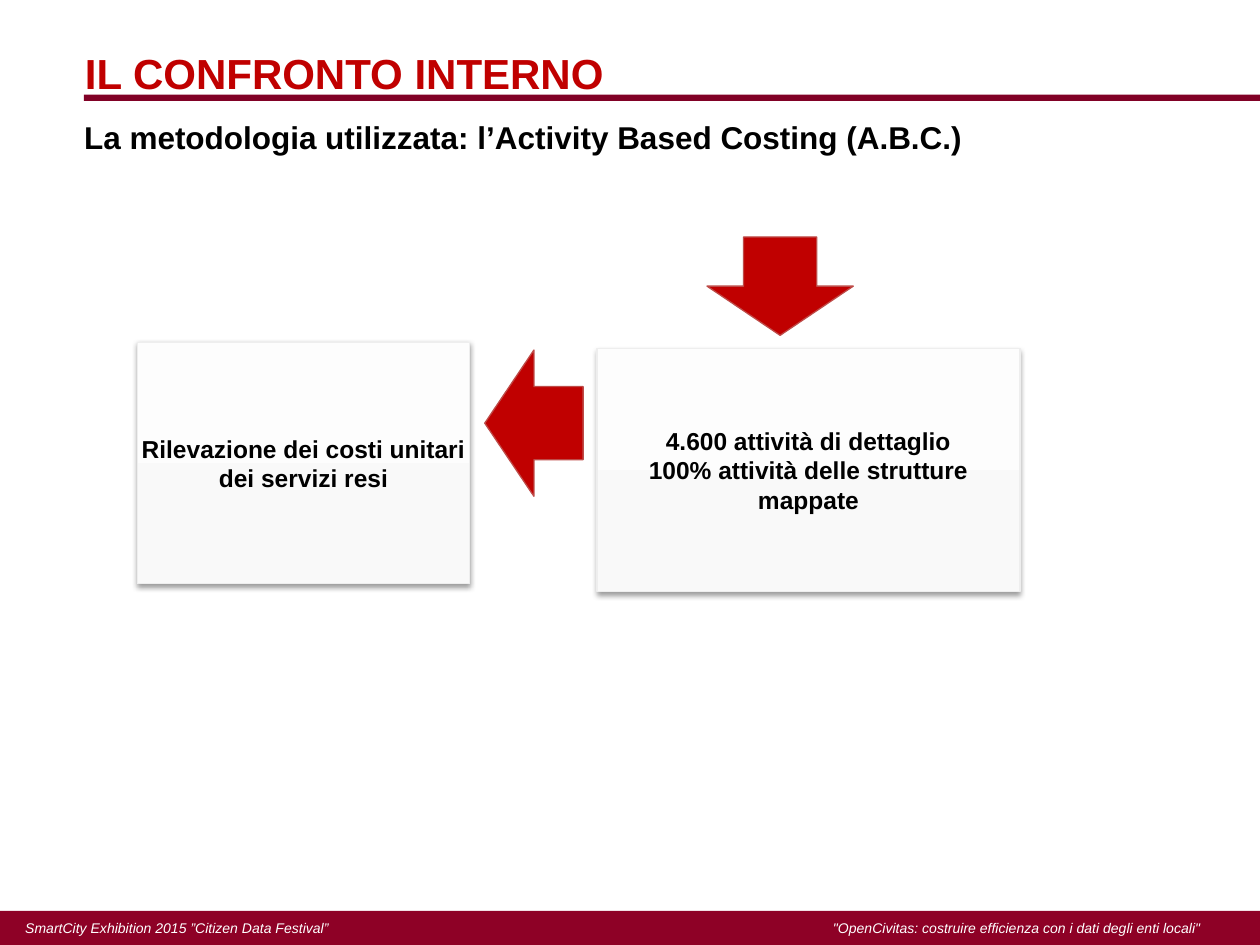
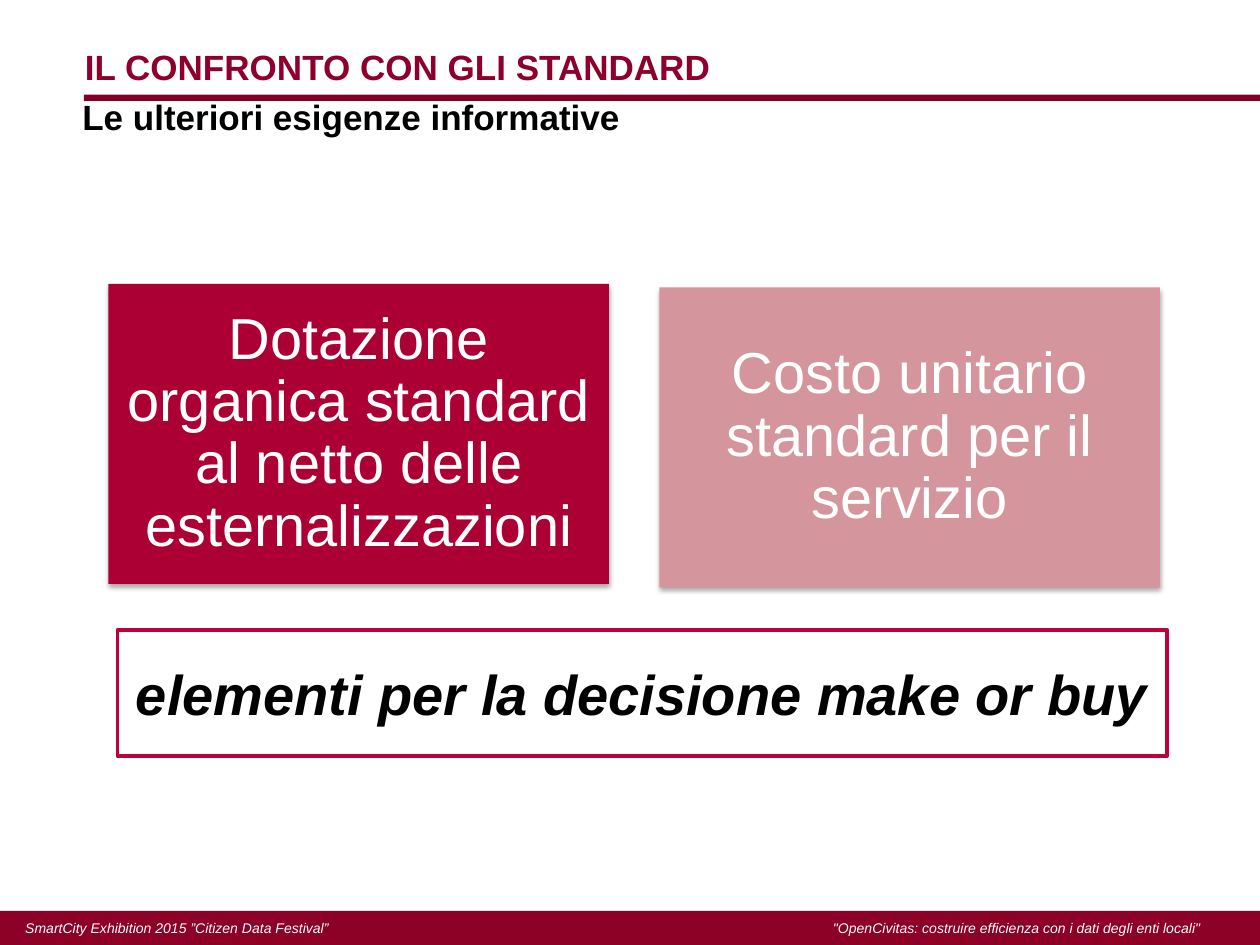
from dataclasses import dataclass

import pptx
import pptx.dml.color
import pptx.enum.shapes
import pptx.enum.text
import pptx.oxml
import pptx.oxml.ns
import pptx.util
from lxml import etree

Pt = pptx.util.Pt
RGB = pptx.dml.color.RGBColor.from_string
Shape = pptx.enum.shapes.MSO_SHAPE
Align = pptx.enum.text.PP_ALIGN
Anchor = pptx.enum.text.MSO_ANCHOR


@dataclass(frozen=True)
class Theme:
    font: str = "Arial"
    black: str = "000000"
    white: str = "FFFFFF"
    rule: str = "810126"
    band: str = "8E0126"
    red: str = "C00000"
    burgundy: str = "8E002B"
    arrow_edge: str = "BE4B48"
    card: tuple = ("F9F9F9", "FDFDFD")
    card_edge: str = "EEEEEE"
    crimson: str = "AC0034"
    rose: str = "D4959C"
    frame: str = "BE0039"
    footer_size: float = 8
    label_size: float = 14
    subtitle_size: float = 18
    heading_size: float = 20
    title_size: float = 24
    conclusion_size: float = 32
    block_size: float = 33


class Deck:
    WIDTH, HEIGHT = 720, 540
    FOOTER_TEXTS = ("SmartCity Exhibition 2015 ”Citizen Data Festival”",
                    '"OpenCivitas: costruire efficienza con i dati degli enti locali"')

    def __init__(self, theme):
        self.theme = theme
        self.presentation = pptx.Presentation()
        self.presentation.slide_width = Pt(self.WIDTH)
        self.presentation.slide_height = Pt(self.HEIGHT)
        self.slide = None

    def new_slide(self, title, top, size, color):
        """Start a slide with its rule, footer band and title."""
        self.slide = self.presentation.slides.add_slide(self.presentation.slide_layouts[5])
        self.shape(Shape.RECTANGLE, (48, 54, 672, 3.6), self.theme.rule)
        self.footer()
        heading = self.slide.shapes.title
        heading.left, heading.top, heading.width, heading.height = map(Pt, (48.5, top, 535, 28))
        self.set_text(heading, [title], size, color, bold=True, align=Align.LEFT,
                      anchor=Anchor.TOP)

    def footer(self):
        band = self.shape(Shape.RECTANGLE, (0, 520.5, self.WIDTH, 19.5), self.theme.band)
        tabs = etree.SubElement(band.text_frame.paragraphs[0]._p.get_or_add_pPr(),
                                pptx.oxml.ns.qn("a:tabLst"))
        etree.SubElement(tabs, pptx.oxml.ns.qn("a:tab"), pos=str(Pt(672)), algn="r")
        self.set_text(band, ["\t".join(self.FOOTER_TEXTS)], self.theme.footer_size,
                      self.theme.white, italic=True, align=Align.LEFT, inset=(14.4, 0))

    def subtitle(self, text, left, top, size):
        box = self.slide.shapes.add_textbox(Pt(left), Pt(top), Pt(640), Pt(28))
        self.set_text(box, [text], size, self.theme.black, bold=True, align=Align.LEFT,
                      anchor=Anchor.TOP, inset=(7.2, 3.6), spacing=0.93)

    def shape(self, preset, box, fill, edge=None, edge_width=0.75):
        """Add a preset shape; a pair of fill colours gives a bottom-to-top gradient."""
        shape = self.slide.shapes.add_shape(preset, *map(Pt, box))
        shape.shadow.inherit = False
        if isinstance(fill, tuple):
            shape.fill.gradient()
            shape.fill.gradient_angle = 90
            for stop, color in zip(shape.fill.gradient_stops, fill):
                stop.color.rgb = RGB(color)
        else:
            shape.fill.solid()
            shape.fill.fore_color.rgb = RGB(fill)
        if edge:
            shape.line.color.rgb = RGB(edge)
            shape.line.width = Pt(edge_width)
        else:
            shape.line.fill.background()
        return shape

    def arrow(self, preset, box):
        self.shape(preset, box, self.theme.red, self.theme.arrow_edge)

    def card(self, box, lines):
        card = self.shape(Shape.RECTANGLE, box, self.theme.card, self.theme.card_edge)
        self.drop_shadow(card, 1.6, 38)
        self.set_text(card, lines, self.theme.label_size, self.theme.black, bold=True,
                      inset=(1.4, 1.4))

    def block(self, box, text, fill):
        block = self.shape(Shape.RECTANGLE, box, fill)
        self.drop_shadow(block, 1.8, 35)
        self.set_text(block, [text], self.theme.block_size, self.theme.white,
                      inset=(10, 10), spacing=0.9)

    def conclusion(self, box, text):
        frame = self.shape(Shape.RECTANGLE, box, self.theme.white, self.theme.frame, 2)
        self.set_text(frame, [text], self.theme.conclusion_size, self.theme.black,
                      bold=True, italic=True, inset=(1.4, 1.4), wrap=False)

    def drop_shadow(self, shape, distance, opacity):
        effects = shape._element.spPr.find(pptx.oxml.ns.qn("a:effectLst"))
        effects.append(pptx.oxml.parse_xml(
            f'<a:outerShdw {pptx.oxml.ns.nsdecls("a")} blurRad="{Pt(3.1)}" dist="{Pt(distance)}"'
            f' dir="5400000" rotWithShape="0"><a:srgbClr val="{self.theme.black}">'
            f'<a:alpha val="{opacity * 1000}"/></a:srgbClr></a:outerShdw>'))

    def set_text(self, shape, lines, size, color, bold=False, italic=False, align=Align.CENTER,
                 anchor=Anchor.MIDDLE, inset=(0, 0), spacing=None, wrap=True):
        frame = shape.text_frame
        frame.auto_size = pptx.enum.text.MSO_AUTO_SIZE.NONE
        frame.word_wrap = wrap
        frame.vertical_anchor = anchor
        frame.margin_left = frame.margin_right = Pt(inset[0])
        frame.margin_top = frame.margin_bottom = Pt(inset[1])
        for index, line in enumerate(lines):
            paragraph = frame.add_paragraph() if index else frame.paragraphs[0]
            paragraph.add_run().text = line
            paragraph.alignment = align
            if spacing:
                paragraph.line_spacing = spacing
            font = paragraph.font
            font.name, font.size = self.theme.font, Pt(size)
            font.bold, font.italic = bold, italic
            font.color.rgb = RGB(color)


def internal_comparison(deck):
    theme = deck.theme
    deck.new_slide("IL CONFRONTO INTERNO", 27, theme.title_size, theme.red)
    deck.subtitle("La metodologia utilizzata: l’Activity Based Costing (A.B.C.)",
                  41, 66, theme.subtitle_size)
    deck.arrow(Shape.DOWN_ARROW, (404, 135.4, 83.6, 56.2))
    deck.card((341.2, 199.2, 241.6, 139),
              ["4.600 attività di dettaglio", "100% attività delle strutture mappate"])
    deck.arrow(Shape.LEFT_ARROW, (277, 200, 56.2, 83.6))
    deck.card((78.4, 195.6, 190, 138), ["Rilevazione dei costi unitari dei servizi resi"])


def standard_comparison(deck):
    theme = deck.theme
    deck.new_slide("IL CONFRONTO CON GLI STANDARD", 26, theme.heading_size, theme.burgundy)
    deck.subtitle("Le ulteriori esigenze informative", 40, 53.3, theme.heading_size)
    deck.block((62, 162.2, 286, 171.5),
               "Dotazione organica standard al netto delle esternalizzazioni", theme.crimson)
    deck.block((376.8, 164.2, 286, 171.5), "Costo unitario standard per il servizio", theme.rose)
    deck.conclusion((67, 360, 600, 72), "elementi per la decisione make or buy")


def main():
    deck = Deck(Theme())
    internal_comparison(deck)
    standard_comparison(deck)
    deck.presentation.save("out.pptx")


if __name__ == "__main__":
    main()
